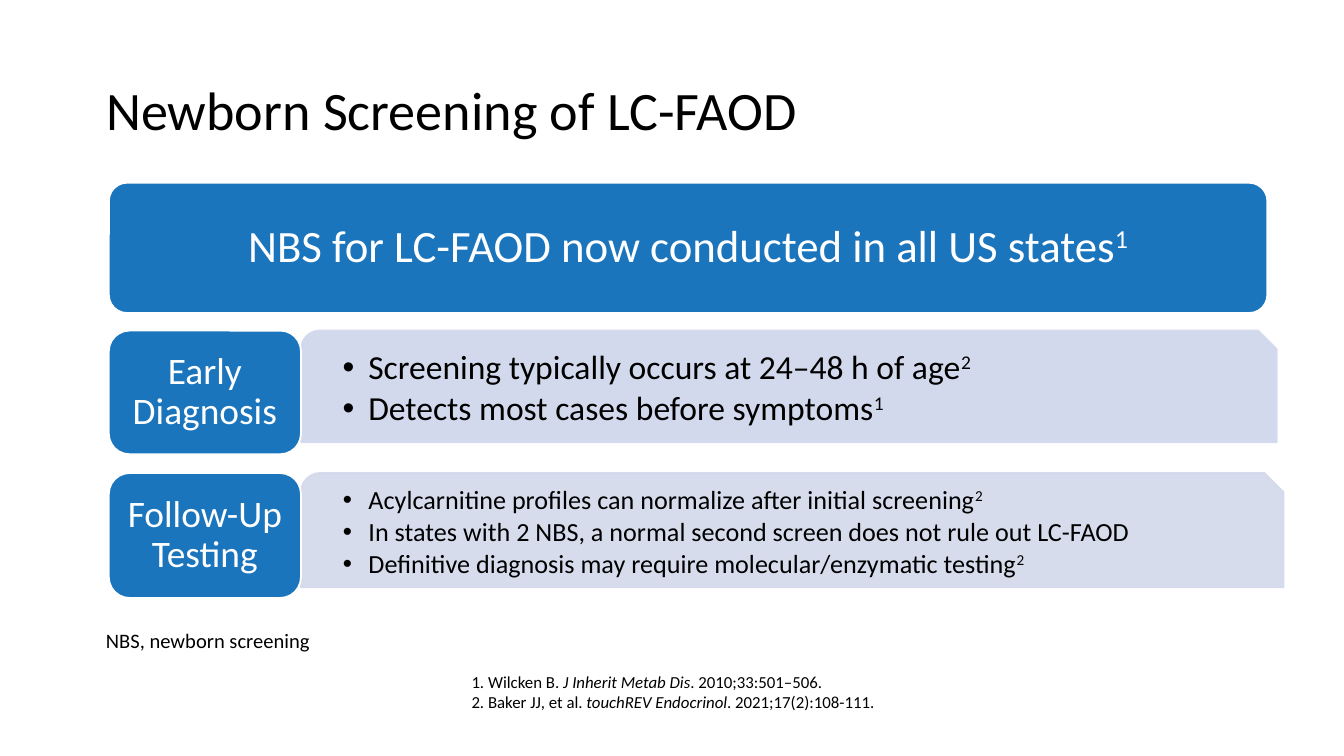
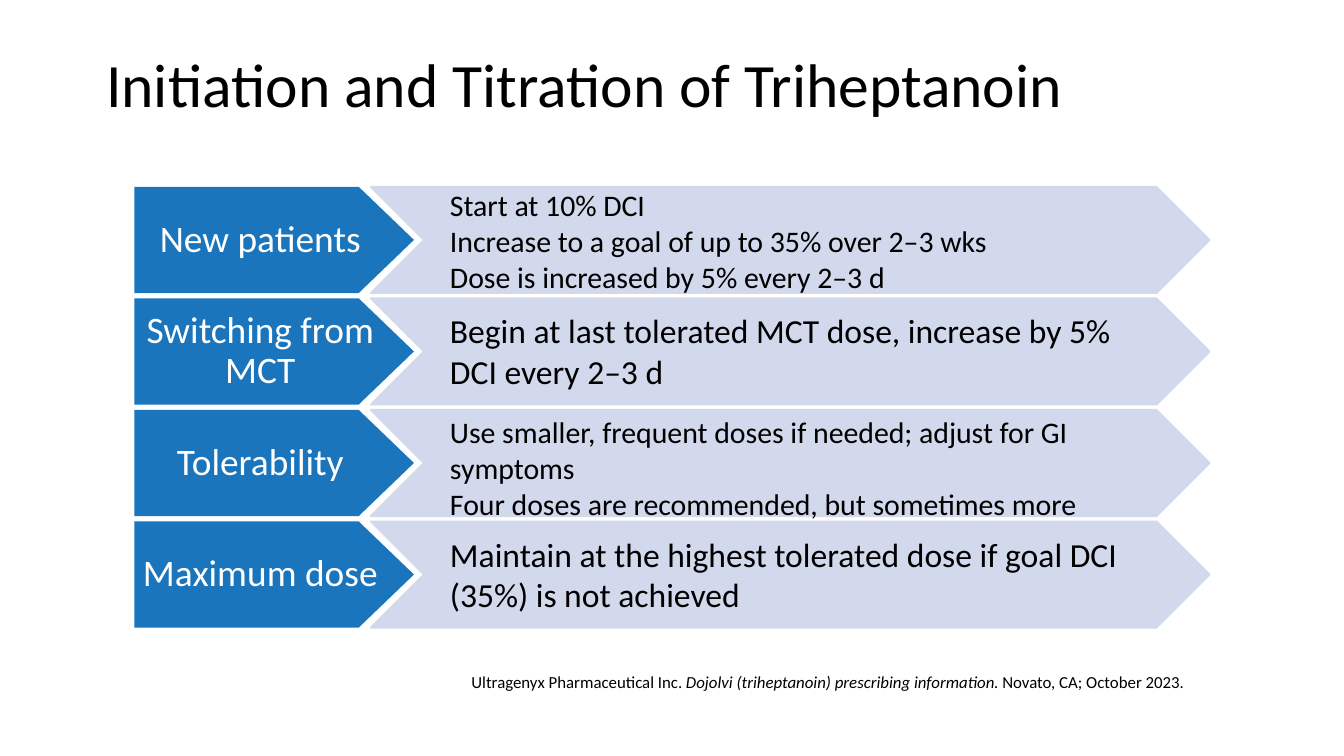
"""Builds two slides on newborn screening and on triheptanoin dosing."""
import pptx
import pptx.dml.color
import pptx.enum.shapes
import pptx.enum.text
import pptx.oxml.ns
import pptx.util
from lxml import etree

Inches = pptx.util.Inches
Pt = pptx.util.Pt
RGBColor = pptx.dml.color.RGBColor
SHAPE = pptx.enum.shapes.MSO_SHAPE
ALIGN = pptx.enum.text.PP_ALIGN
ANCHOR = pptx.enum.text.MSO_ANCHOR
qn = pptx.oxml.ns.qn

BLUE = RGBColor(0x1A, 0x75, 0xBC)
PALE = RGBColor(0xD3, 0xD9, 0xEC)
WHITE = RGBColor(0xFF, 0xFF, 0xFF)
BLACK = RGBColor(0, 0, 0)
FONT = "Calibri"
SUPER, ITALIC = "super", "italic"


def write(box, paragraphs, size, color=BLACK, align=ALIGN.LEFT, anchor=ANCHOR.TOP,
          insets=(0.1, 0.05, 0.1, 0.05), spacing=1.0, after=0, bullets=False):
    """Fill a shape with paragraphs, each a list of (text, style) spans."""
    frame = box.text_frame
    frame.word_wrap = True
    frame.auto_size = pptx.enum.text.MSO_AUTO_SIZE.NONE
    frame.vertical_anchor = anchor
    frame.margin_left, frame.margin_top, frame.margin_right, frame.margin_bottom = map(Inches, insets)
    for index, spans in enumerate(paragraphs):
        paragraph = frame.add_paragraph() if index else frame.paragraphs[0]
        if bullets:
            paragraph.level = 1
            properties = paragraph._p.get_or_add_pPr()
            properties.set("marL", str(Inches(0.19)))
            properties.set("indent", str(-Inches(0.19)))
            etree.SubElement(properties, qn("a:buFont")).set("typeface", "Arial")
            etree.SubElement(properties, qn("a:buChar")).set("char", "•")
        paragraph.alignment = align
        paragraph.line_spacing = spacing
        paragraph.space_before = Pt(0)
        paragraph.space_after = Pt(size * after)
        paragraph.font.name = FONT
        paragraph.font.size = Pt(size)
        paragraph.font.color.rgb = color
        for text, style in spans:
            span = paragraph.add_run()
            span.text = text
            if style == SUPER:
                span._r.get_or_add_rPr().set("baseline", "30000")
            elif style == ITALIC:
                span.font.italic = True


def block(page, preset, place, fill, line=None):
    """Add a flat filled shape, outlined when a line colour is given."""
    shape = page.shapes.add_shape(preset, *map(Inches, place))
    shape.shadow.inherit = False
    shape.fill.solid()
    shape.fill.fore_color.rgb = fill
    if line is None:
        shape.line.fill.background()
    else:
        shape.line.color.rgb = line
        shape.line.width = Pt(1)
    return shape


deck = pptx.Presentation()
deck.slide_width = Inches(10)
deck.slide_height = Inches(10 * 9 / 16)

pages = []
for title, place, size in [
    ("Newborn Screening of LC-FAOD", (0.69, 0.3, 8.87, 1.08), 29),
    ("Initiation and Titration of Triheptanoin", (0.69, 0.11, 8.62, 1.09), 33),
]:
    page = deck.slides.add_slide(deck.slide_layouts[5])
    heading = page.shapes.title
    heading.left, heading.top, heading.width, heading.height = map(Inches, place)
    write(heading, [[(title, None)]], size, anchor=ANCHOR.MIDDLE, spacing=0.9)
    pages.append(page)
screening, titration = pages

banner = block(screening, SHAPE.ROUNDED_RECTANGLE, (0.81, 1.36, 8.62, 0.97), BLUE, WHITE)
banner.adjustments[0] = 0.14
write(banner, [[("NBS for LC-FAOD now conducted in all US states", None), ("1", SUPER)]], 24, WHITE,
      ALIGN.CENTER, ANCHOR.MIDDLE, (0.11, 0.07, 0.11, 0.07), 0.9, 0.35)

steps = [
    ("Early Diagnosis", 2.46, 0.92, 7.26, 0.83, 18, [
        [("Screening typically occurs at 24–48 h of age", None), ("2", SUPER)],
        [("Detects most cases before symptoms", None), ("1", SUPER)],
    ]),
    ("Follow-Up Testing", 3.52, 0.93, 7.31, 0.85, 14, [
        [("Acylcarnitine profiles can normalize after initial screening", None), ("2", SUPER)],
        [("In states with 2 NBS, a normal second screen does not rule out LC-FAOD", None)],
        [("Definitive diagnosis may require molecular/enzymatic testing", None), ("2", SUPER)],
    ]),
]
for label, top, label_height, width, height, size, points in steps:
    panel = block(screening, SHAPE.SNIP_ROUND_RECTANGLE, (2.24, top, width, height), PALE, PALE)
    colors = list(panel._element.spPr.iter(qn("a:srgbClr")))
    for color in colors if label == "Follow-Up Testing" else colors[1:]:
        etree.SubElement(color, qn("a:alpha")).set("val", "90000")
    write(panel, points, size, anchor=ANCHOR.MIDDLE, insets=(0.27, 0.16, 0.3, 0.16),
          spacing=0.9, after=0.15, bullets=True)
    tag = block(screening, SHAPE.ROUNDED_RECTANGLE, (0.81, top, 1.43, label_height), BLUE, WHITE)
    write(tag, [[(label, None)]], 20, WHITE, ALIGN.CENTER, ANCHOR.MIDDLE,
          (0.08, 0.06, 0.08, 0.06), 0.9, 0.35)

abbreviation = screening.shapes.add_textbox(Inches(0.69), Inches(4.62), Inches(1.73), Inches(0.29))
write(abbreviation, [[("NBS, newborn screening", None)]], 11)
abbreviation.text_frame.word_wrap = False

rows = [
    ("New patients", 1.34, 16, ["Start at 10% DCI", "Increase to a goal of up to 35% over 2–3 wks",
                                "Dose is increased by 5% every 2–3 d"]),
    ("Switching from MCT", 2.26, 18, ["Begin at last tolerated MCT dose, increase by 5% DCI every 2–3 d"]),
    ("Tolerability", 3.03, 16, ["Use smaller, frequent doses if needed; adjust for GI symptoms",
                                "Four doses are recommended, but sometimes more"]),
    ("Maximum dose", 3.92, 18, ["Maintain at the highest tolerated dose if goal DCI (35%) is not achieved"]),
]
for index, (label, text_top, size, lines) in enumerate(rows):
    top = 1.39 + 0.83 * index
    block(titration, SHAPE.CHEVRON, (2.76, top, 6.24, 0.79), PALE, PALE)
    arrow = block(titration, SHAPE.PENTAGON, (1, top, 2.08, 0.79), BLUE)
    arrow.adjustments[0] = 0.52
    write(arrow, [[(label, None)]], 20, WHITE, ALIGN.CENTER, ANCHOR.MIDDLE,
          (0.03, 0.03, 0.03, 0.03), 0.9, 0.35)
    advice = titration.shapes.add_textbox(Inches(3.25), Inches(text_top), Inches(5.43),
                                          Inches(0.91 if size == 16 else 0.71))
    write(advice, [[(line, None)] for line in lines], size)

references = [
    (screening, 5.58, 0.4, [
        [("1. Wilcken B. ", None), ("J Inherit Metab Dis", ITALIC), (". 2010;33:501–506.", None)],
        [("2. Baker JJ, et al. ", None), ("touchREV Endocrinol", ITALIC), (". 2021;17(2):108-111.", None)],
    ]),
    (titration, 6.53, 0.25, [
        [("Ultragenyx Pharmaceutical Inc. ", None),
         ("Dojolvi (triheptanoin) prescribing information.", ITALIC),
         (" Novato, CA; October 2023.", None)],
    ]),
]
for page, width, height, citations in references:
    footer = page.shapes.add_textbox(Inches(3.41), Inches(4.95), Inches(width), Inches(height))
    write(footer, citations, 9, align=ALIGN.JUSTIFY)

deck.save("out.pptx")
